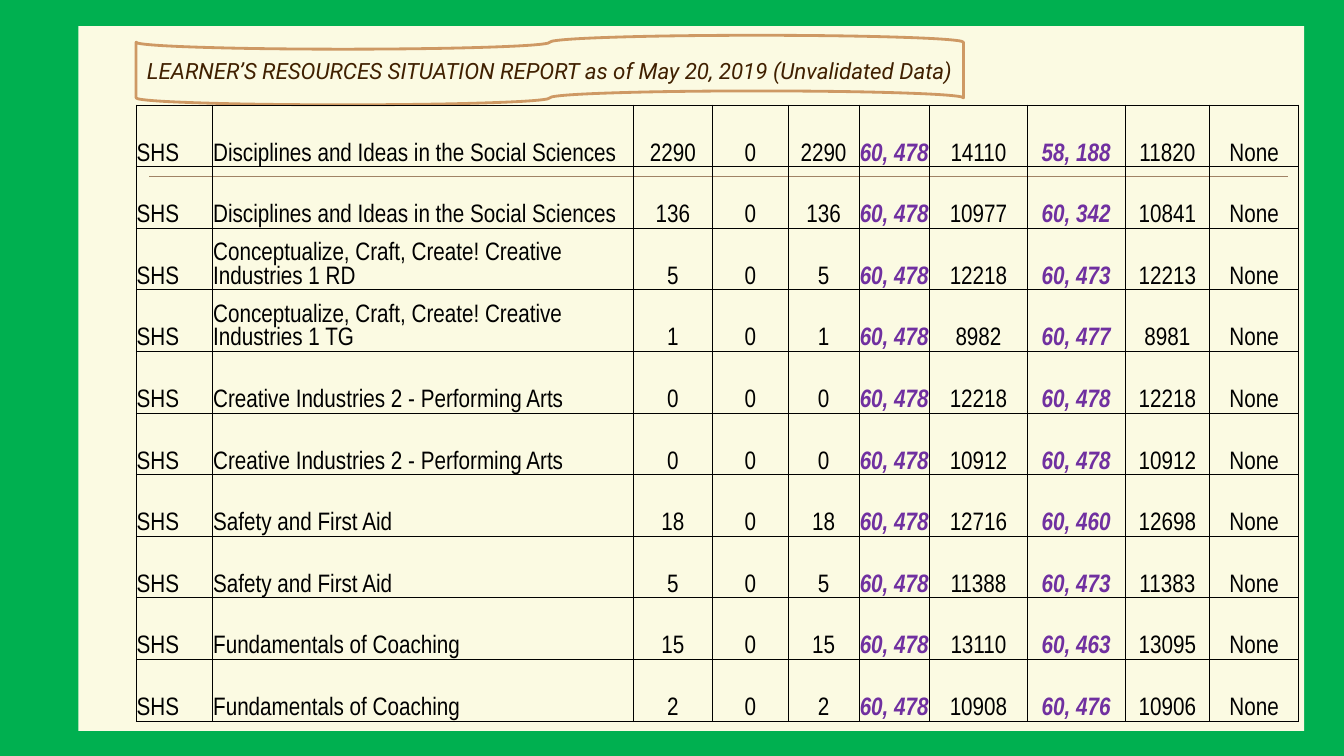
from dataclasses import dataclass

from lxml import etree
from pptx import Presentation
from pptx.dml.color import RGBColor
from pptx.enum.shapes import MSO_CONNECTOR, MSO_SHAPE
from pptx.enum.text import MSO_ANCHOR, PP_ALIGN
from pptx.oxml.ns import qn
from pptx.util import Pt

RECT = MSO_SHAPE.RECTANGLE
TAPE = MSO_SHAPE.FLOWCHART_PUNCHED_TAPE
STRAIGHT = MSO_CONNECTOR.STRAIGHT
MIDDLE, BOTTOM = MSO_ANCHOR.MIDDLE, MSO_ANCHOR.BOTTOM
LEFT, CENTER = PP_ALIGN.LEFT, PP_ALIGN.CENTER


@dataclass(frozen=True)
class Theme:
    green: RGBColor = RGBColor(0x00, 0xB0, 0x50)
    cream: RGBColor = RGBColor(0xFB, 0xFA, 0xE2)
    tan: RGBColor = RGBColor(0xCE, 0x99, 0x64)
    rule: RGBColor = RGBColor(0xA0, 0x83, 0x66)
    brown: RGBColor = RGBColor(0x40, 0x20, 0x00)
    black: RGBColor = RGBColor(0x00, 0x00, 0x00)
    purple: RGBColor = RGBColor(0x70, 0x30, 0xA0)
    title_font: str = "Roboto"
    table_font: str = "Arial Narrow"
    title_size: Pt = Pt(16)
    table_size: Pt = Pt(18)


theme = Theme()


def add_text(tf, text, font, size, color, align=CENTER, bold=False, italic=False):
    p = tf.paragraphs[0]
    p.alignment = align
    r = p.add_run()
    r.text = text
    r.font.name = font
    r.font.size = size
    r.font.color.rgb = color
    r.font.bold = bold
    r.font.italic = italic


def add_borders(cell, color, width):
    tc_pr = cell._tc.get_or_add_tcPr()
    for i, side in enumerate(("a:lnL", "a:lnR", "a:lnT", "a:lnB")):
        ln = etree.Element(qn(side), w=str(width))
        fill = etree.SubElement(ln, qn("a:solidFill"))
        etree.SubElement(fill, qn("a:srgbClr"), val=str(color))
        tc_pr.insert(i, ln)


prs = Presentation()
prs.slide_width, prs.slide_height = Pt(960), Pt(540)
s = prs.slides.add_slide(prs.slide_layouts[6])
s.background.fill.solid()
s.background.fill.fore_color.rgb = theme.green

page = s.shapes.add_shape(RECT, Pt(56), Pt(18.7), Pt(875.5), Pt(503.3))
page.shadow.inherit = False
page.fill.solid()
page.fill.fore_color.rgb = theme.cream
page.line.fill.background()

rule = s.shapes.add_connector(STRAIGHT, Pt(106.5), Pt(126), Pt(920), Pt(126))
rule.line.color.rgb = theme.rule
rule.line.width = Pt(0.25)
etree.SubElement(rule._element.spPr, qn("a:effectLst"))

banner = s.shapes.add_shape(TAPE, Pt(97.2), Pt(25.2), Pt(591), Pt(49.7))
banner.shadow.inherit = False
banner.fill.solid()
banner.fill.fore_color.rgb = theme.cream
banner.line.color.rgb = theme.tan
banner.line.width = Pt(2)
tf = banner.text_frame
tf.word_wrap = True
tf.vertical_anchor = MIDDLE
tf.margin_left = tf.margin_right = tf.margin_top = tf.margin_bottom = 0
add_text(tf, "LEARNER’S RESOURCES SITUATION REPORT as of May 20, 2019 (Unvalidated Data)",
         theme.title_font, theme.title_size, theme.brown, italic=True)

ENROLMENT = 60478
resources = [
    ("Disciplines and Ideas in the Social Sciences", 2290, 14110),
    ("Disciplines and Ideas in the Social Sciences", 136, 10977),
    ("Conceptualize, Craft, Create! Creative Industries 1 RD", 5, 12218),
    ("Conceptualize, Craft, Create! Creative Industries 1 TG", 1, 8982),
    ("Creative Industries 2 - Performing Arts", 0, 12218),
    ("Creative Industries 2 - Performing Arts", 0, 10912),
    ("Safety and First Aid", 18, 12716),
    ("Safety and First Aid", 5, 11388),
    ("Fundamentals of Coaching", 15, 13110),
    ("Fundamentals of Coaching", 2, 10908),
]
col_widths = [54.7, 300.3, 56.9, 54, 50.4, 50.6, 69.8, 69.8, 60.5, 63.4]
ROW_HEIGHT = 44
LEFT_COLS, PURPLE_COLS = (0, 1), (5, 7)

table = s.shapes.add_table(len(resources), len(col_widths), Pt(97.2), Pt(75),
                           Pt(sum(col_widths)), Pt(ROW_HEIGHT * len(resources))).table
table.first_row = table.horz_banding = False
for col, width in zip(table.columns, col_widths):
    col.width = Pt(width)

for i, (title, stock, need) in enumerate(resources):
    table.rows[i].height = Pt(ROW_HEIGHT)
    totals = [f"{n:,}".replace(",", ", ") for n in (ENROLMENT, ENROLMENT - stock)]
    values = ["SHS", title, stock, 0, stock, totals[0], need, totals[1], need - stock, "None"]
    for j, value in enumerate(values):
        cell = table.cell(i, j)
        cell.fill.background()
        cell.vertical_anchor = BOTTOM
        cell.margin_left = cell.margin_right = cell.margin_top = Pt(0.4)
        cell.margin_bottom = 0
        add_borders(cell, theme.black, Pt(0.5))
        strong = j in PURPLE_COLS
        add_text(cell.text_frame, str(value), theme.table_font, theme.table_size,
                 theme.purple if strong else theme.black,
                 LEFT if j in LEFT_COLS else CENTER, strong, strong)

prs.save("out.pptx")
